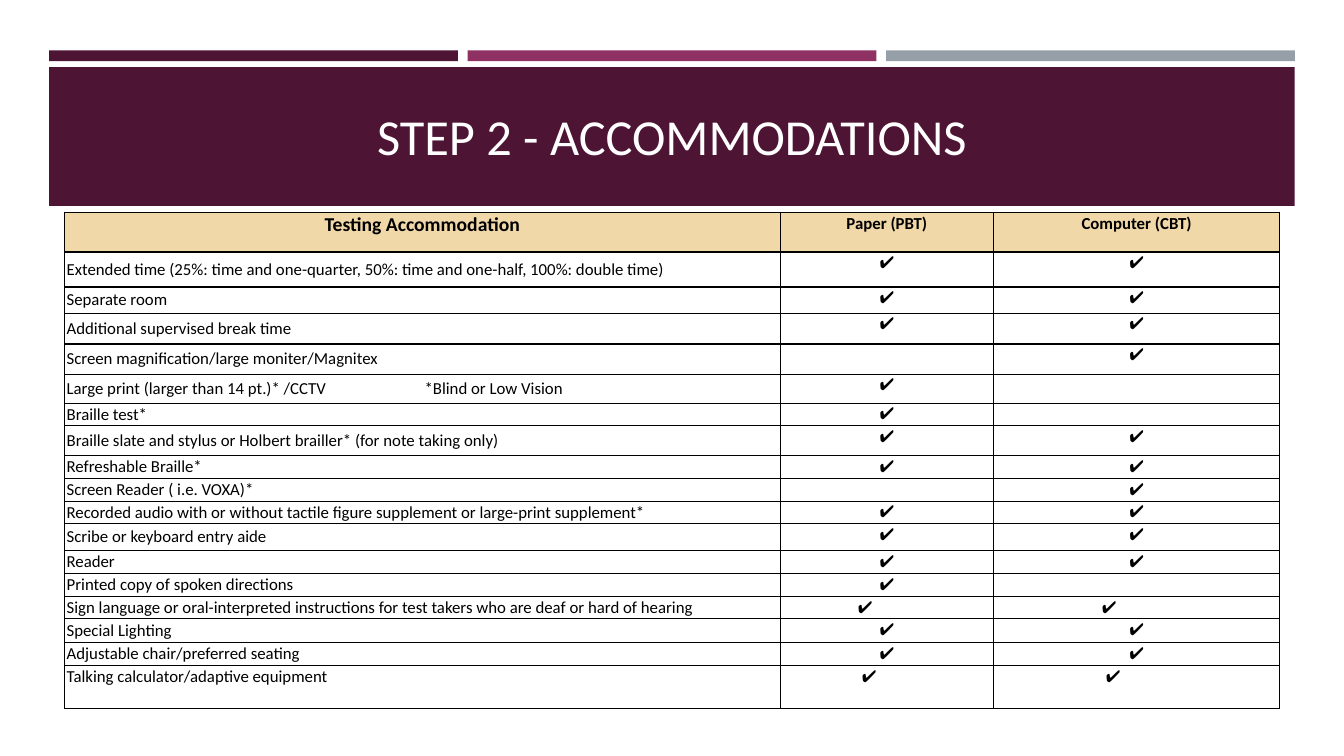
from pptx import Presentation, util as u
from pptx.dml.color import RGBColor
from pptx.enum import shapes, text
from pptx.oxml import parse_xml
from pptx.oxml.ns import nsdecls

FONT = "Calibri"
PLUM, MAGENTA, GREY = "4D1434", "903163", "969FA7"
BLACK, WHITE, SAND = "000000", "FFFFFF", "F0D8A8"
CHECK = "✔"

HEADINGS = (("Testing Accommodation", 18.03, 14), ("Paper (PBT)", 5.38, 12), ("Computer (CBT)", 7.21, 12))
HEADING_HEIGHT = 1.0
BOTH, PAPER, COMPUTER = (True, True), (True, False), (False, True)
ACCOMMODATIONS = (
    ("Extended time (25%: time and one-quarter, 50%: time and one-half, 100%: double time)", 0.88, BOTH),
    ("Separate room", 0.66, BOTH),
    ("Additional supervised break time", 0.78, BOTH),
    ("Screen magnification/large moniter/Magnitex", 0.76, COMPUTER),
    ("Large print (larger than 14 pt.)* /CCTV\t*Blind or Low Vision", 0.73, PAPER),
    ("Braille test*", 0.57, PAPER),
    ("Braille slate and stylus or Holbert brailler* (for note taking only)", 0.75, BOTH),
    ("Refreshable Braille*", 0.58, BOTH),
    ("Screen Reader ( i.e. VOXA)*", 0.57, COMPUTER),
    ("Recorded audio with or without tactile figure supplement or large-print supplement*", 0.57, BOTH),
    ("Scribe or keyboard entry aide", 0.68, BOTH),
    ("Reader", 0.58, BOTH),
    ("Printed copy of spoken directions", 0.57, PAPER),
    ("Sign language or oral-interpreted instructions for test takers who are deaf or hard of hearing", 0.57, BOTH),
    ("Special Lighting", 0.6, BOTH),
    ("Adjustable chair/preferred seating", 0.58, BOTH),
    ("Talking calculator/adaptive equipment", 1.08, BOTH),
)
CHECK_INDENTS = {14: (1.91, 2.68), 17: (2.01, 2.78)}
NOTE_TAB = 9.02


def color(hex_value):
    """Turn a hex string into a colour."""
    return RGBColor.from_string(hex_value)


def apply(target, formats):
    """Set every attribute in formats on target."""
    for name, value in formats.items():
        setattr(target, name, value)


def style_font(font, size, hex_value, bold=False):
    """Give a font the slide's typeface, a size, a colour and a weight."""
    apply(font, {"name": FONT, "size": u.Pt(size), "bold": bold})
    font.color.rgb = color(hex_value)


def add_bar(slide, left, top, width, height, fill):
    """Add a plain filled rectangle."""
    bar = slide.shapes.add_shape(
        shapes.MSO_SHAPE.RECTANGLE, u.Cm(left), u.Cm(top), u.Cm(width), u.Cm(height))
    bar.fill.solid()
    bar.fill.fore_color.rgb = color(fill)
    bar.line.fill.background()
    bar.shadow.inherit = False


def add_banner(slide, left, top, width, heading):
    """Place three accent strips, the title band and the title."""
    gap = 0.25
    strip = (width - 2 * gap) / 3
    for place, fill in enumerate((PLUM, MAGENTA, GREY)):
        add_bar(slide, left + place * (strip + gap), top, strip, 0.27, fill)
    add_bar(slide, left, top + 0.42, width, 3.5, PLUM)

    title = slide.shapes.title
    title.element.getparent().append(title.element)
    apply(title, {"left": u.Cm(left + 0.39), "top": u.Cm(top + 0.77),
                  "width": u.Cm(width - 0.78), "height": u.Cm(2.74)})
    title.text_frame.text = heading
    apply(title.text_frame, {"vertical_anchor": text.MSO_ANCHOR.MIDDLE,
                             "auto_size": text.MSO_AUTO_SIZE.NONE})
    line = title.text_frame.paragraphs[0]
    line.alignment = text.PP_ALIGN.CENTER
    style_font(line.runs[0].font, 36, WHITE)


def outline_cell(cell):
    """Draw a thin black border on all four sides of a cell."""
    properties = cell._tc.get_or_add_tcPr()
    for side in ("lnL", "lnR", "lnT", "lnB"):
        properties.append(parse_xml(
            f'<a:{side} {nsdecls("a")} w="12700"><a:solidFill>'
            f'<a:srgbClr val="{BLACK}"/></a:solidFill></a:{side}>'))


def fill_cell(cell, words, fill=WHITE, size=12, bold=False, centred=True, middle=False, indent=0):
    """Write and format one table cell."""
    outline_cell(cell)
    cell.fill.solid()
    cell.fill.fore_color.rgb = color(fill)
    apply(cell, {"margin_left": u.Cm(0.05), "margin_right": u.Cm(0.05),
                 "margin_top": u.Cm(0.02), "margin_bottom": u.Cm(0.02),
                 "vertical_anchor": text.MSO_ANCHOR.MIDDLE if middle else text.MSO_ANCHOR.TOP})
    line = cell.text_frame.paragraphs[0]
    line.alignment = text.PP_ALIGN.CENTER if centred else text.PP_ALIGN.LEFT
    if not words:
        line._p.append(parse_xml(f'<a:endParaRPr {nsdecls("a")} sz="{size * 100}"/>'))
        return
    run = line.add_run()
    run.text = words
    style_font(run.font, size, BLACK, bold)
    layout = line._p.get_or_add_pPr()
    if indent:
        layout.set("marL", str(u.Cm(indent)))
        layout.set("indent", "0")
    if "\t" in words:
        layout.append(parse_xml(
            f'<a:tabLst {nsdecls("a")}><a:tab pos="{u.Cm(NOTE_TAB)}" algn="l"/></a:tabLst>'))


def add_accommodations(slide, left, top, width, height):
    """Place the table of accommodations by test format."""
    table = slide.shapes.add_table(
        len(ACCOMMODATIONS) + 1, len(HEADINGS),
        u.Cm(left), u.Cm(top), u.Cm(width), u.Cm(height)).table
    apply(table, {"first_row": False, "horz_banding": False})
    table.rows[0].height = u.Cm(HEADING_HEIGHT)
    for column, (heading, column_width, size) in enumerate(HEADINGS):
        table.columns[column].width = u.Cm(column_width)
        fill_cell(table.cell(0, column), heading, SAND, size, bold=True)
    for row, (label, row_height, formats) in enumerate(ACCOMMODATIONS, 1):
        table.rows[row].height = u.Cm(row_height)
        fill_cell(table.cell(row, 0), label, centred=False, middle=row < len(ACCOMMODATIONS))
        indents = CHECK_INDENTS.get(row, (0, 0))
        for column, (offered, indent) in enumerate(zip(formats, indents), 1):
            fill_cell(table.cell(row, column), CHECK if offered else "",
                      centred=not indent, indent=indent)


def main():
    """Build and save the accommodations slide."""
    deck = Presentation()
    apply(deck, {"slide_width": u.Cm(33.87), "slide_height": u.Cm(19.05)})
    slide = deck.slides.add_slide(deck.slide_layouts[5])
    add_banner(slide, 1.24, 1.27, 31.39, "STEP 2 - ACCOMMODATIONS")
    table_height = HEADING_HEIGHT + sum(row_height for _, row_height, _ in ACCOMMODATIONS)
    add_accommodations(slide, 1.63, 5.35, 30.62, table_height)
    deck.save("out.pptx")


if __name__ == "__main__":
    main()
